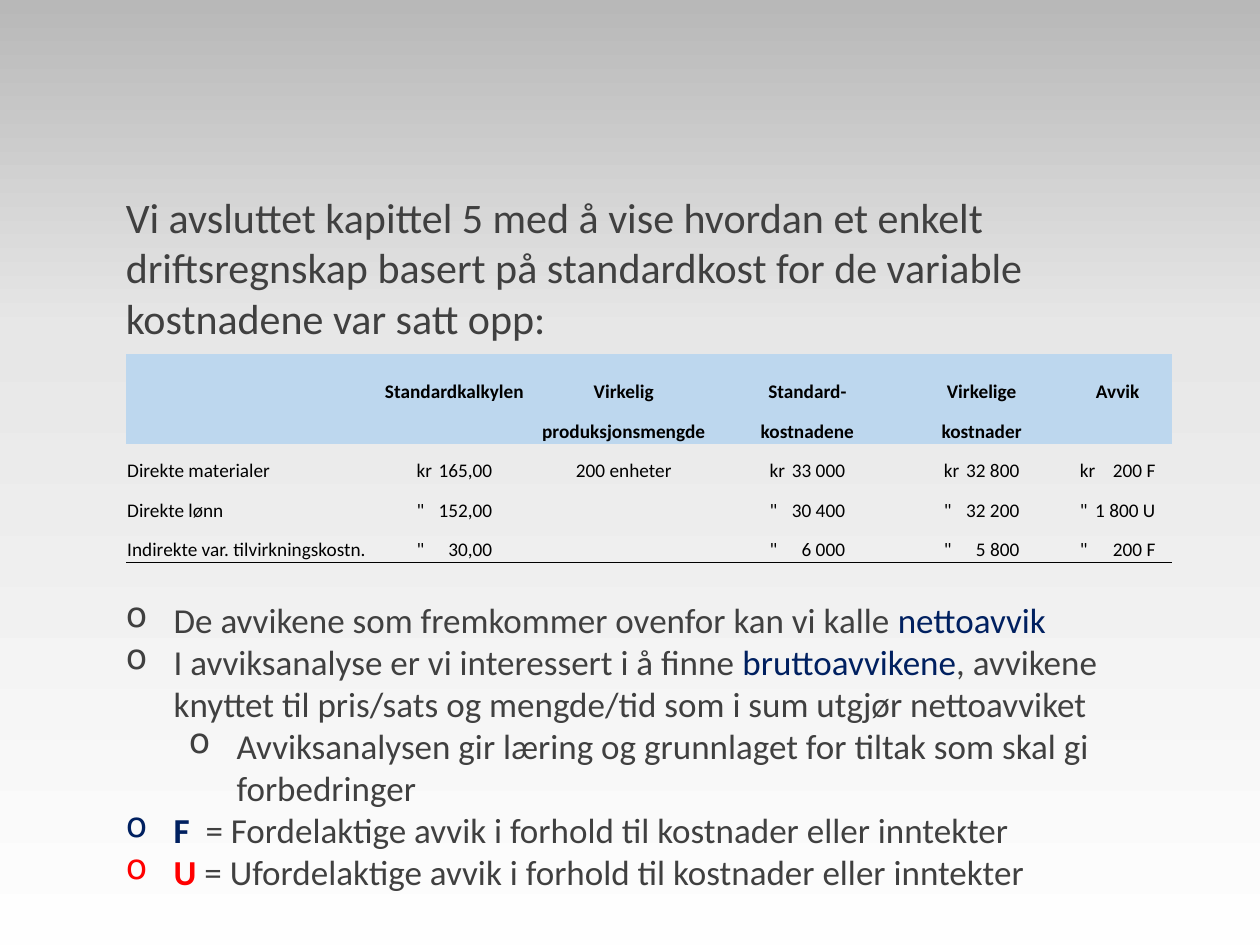
from copy import deepcopy
from dataclasses import dataclass

from lxml import etree
from pptx import Presentation
from pptx import util as u
from pptx.dml.color import RGBColor
from pptx.enum import text
from pptx.oxml.ns import qn


@dataclass(frozen=True)
class Theme:
    font: str = "Calibri"
    body: str = "404040"
    black: str = "000000"
    key: str = "002060"
    warning: str = "FF0000"
    header: str = "BDD7EE"
    backdrop: tuple = ((0, "B8B8B8"), (0.35, "E7E7E7"), (1, "FEFEFE"))
    intro_size: int = 24
    bullet_size: int = 20
    table_size: int = 11


@dataclass(frozen=True)
class Box:
    left: int
    top: int
    width: int
    height: int

    def share(self, left, top, width, height):
        return Box(int(self.left + left * self.width), int(self.top + top * self.height),
                   int(width * self.width), int(height * self.height))

    def sides(self):
        return self.left, self.top, self.width, self.height


THEME = Theme()
PLAIN_TABLE = "{2D5ABB26-0587-4C30-8999-92F81FD0307C}"
COLUMNS = (2, 1.24, 1.46, 1.47, 1.31, 0.86)
ROWS = (0.39, 0.31, 0.31, 0.31, 0.31)
HEADER_ROWS = 2
AMOUNT_WIDTH = u.Inches(0.6)
INDENT = u.Inches(0.38)
LEVEL_STEP = u.Inches(0.5)
INTRO_GAP = u.Pt(146)

COSTS = (
    ("", "Standardkalkylen", "Virkelig", "Standard-", "Virkelige", "Avvik"),
    ("", "", "produksjonsmengde", "kostnadene", "kostnader", ""),
    ("Direkte materialer", "kr\t165,00", "200 enheter", "kr\t33 000", "kr\t32 800", "kr\t200 F"),
    ("Direkte lønn", '"\t152,00', "", '"\t30 400', '"\t32 200', '"\t1 800 U'),
    ("Indirekte var. tilvirkningskostn.", '"\t30,00', "", '"\t6 000', '"\t5 800', '"\t200 F'),
)

INTRO = ("Vi avsluttet kapittel 5 med å vise hvordan et enkelt driftsregnskap basert på "
         "standardkost for de variable kostnadene var satt opp:")

POINTS = (
    (0, (("De avvikene som fremkommer ovenfor kan vi kalle ", THEME.body, False),
         ("nettoavvik", THEME.key, False))),
    (0, (("I avviksanalyse er vi interessert i å finne ", THEME.body, False),
         ("bruttoavvikene", THEME.key, False),
         (", avvikene knyttet til pris/sats og mengde/tid som i sum utgjør nettoavviket",
          THEME.body, False))),
    (1, (("Avviksanalysen gir læring og grunnlaget for tiltak som skal gi forbedringer",
          THEME.body, False),)),
    (0, (("F ", THEME.key, True),
         (" = Fordelaktige avvik i forhold til kostnader eller inntekter", THEME.body, False))),
    (0, (("U", THEME.warning, True),
         (" = Ufordelaktige avvik i forhold til kostnader eller inntekter", THEME.body, False))),
)


def style(run, size, color, bold=False):
    run.font.name = THEME.font
    run.font.size = u.Pt(size)
    run.font.bold = bold
    run.font.color.rgb = RGBColor.from_string(color)


def paint_background(slide):
    fill = slide.background.fill
    fill.gradient()
    fill.gradient_angle = 270
    stops = next(slide.element.iter(qn("a:gsLst")))
    stops.append(deepcopy(stops[0]))
    for stop, (position, color) in zip(slide.background.fill.gradient_stops, THEME.backdrop):
        stop.position = position
        stop.color.rgb = RGBColor.from_string(color)


def rule_below(cell):
    line = etree.Element(qn("a:lnB"), w=str(u.Pt(0.5)))
    solid = etree.SubElement(line, qn("a:solidFill"))
    etree.SubElement(solid, qn("a:srgbClr"), val=THEME.black)
    cell._tc.get_or_add_tcPr().insert(0, line)


def align_amount(cell, column_width):
    cell.margin_left = (column_width - AMOUNT_WIDTH) // 2
    properties = cell.text_frame.paragraphs[0]._p.get_or_add_pPr()
    tabs = etree.SubElement(properties, qn("a:tabLst"))
    etree.SubElement(tabs, qn("a:tab"), pos=str(AMOUNT_WIDTH), algn="r")


def fill_cell(cell, words, row, column, column_width):
    cell.margin_left = cell.margin_right = u.Inches(0.01)
    cell.margin_top = cell.margin_bottom = 0
    cell.vertical_anchor = text.MSO_ANCHOR.BOTTOM
    is_header = row < HEADER_ROWS
    if is_header:
        cell.fill.solid()
        cell.fill.fore_color.rgb = RGBColor.from_string(THEME.header)
    else:
        cell.fill.background()
    if row == len(ROWS) - 1:
        rule_below(cell)
    if not words:
        return
    paragraph = cell.text_frame.paragraphs[0]
    paragraph.text = words
    for run in paragraph.runs:
        style(run, THEME.table_size, THEME.black, is_header)
    if "\t" in words:
        paragraph.alignment = text.PP_ALIGN.LEFT
        align_amount(cell, column_width)
    elif column:
        paragraph.alignment = text.PP_ALIGN.CENTER


def add_cost_table(slide, box):
    frame = slide.shapes.add_table(len(ROWS), len(COLUMNS), *box.sides())
    costs = frame.table
    costs.first_row = costs.horz_banding = False
    costs._tbl.tblPr.find(qn("a:tableStyleId")).text = PLAIN_TABLE
    for column, share in zip(costs.columns, COLUMNS):
        column.width = int(box.width * share / sum(COLUMNS))
    for row, share in zip(costs.rows, ROWS):
        row.height = int(box.height * share / sum(ROWS))
    for r, entries in enumerate(COSTS):
        for c, words in enumerate(entries):
            fill_cell(costs.cell(r, c), words, r, c, costs.columns[c].width)


def add_bullet(paragraph, level):
    paragraph.level = level
    properties = paragraph._p.get_or_add_pPr()
    properties.set("marL", str(INDENT + level * LEVEL_STEP))
    properties.set("indent", str(-INDENT))
    etree.SubElement(properties, qn("a:buChar"), char="o")


def add_explanation(slide, box):
    frame = slide.shapes.add_textbox(*box.sides()).text_frame
    frame.word_wrap = True
    intro = frame.paragraphs[0]
    intro.text = INTRO
    style(intro.runs[0], THEME.intro_size, THEME.body)
    for index, (level, pieces) in enumerate(POINTS):
        point = frame.add_paragraph()
        if index == 0:
            point.space_before = INTRO_GAP
        add_bullet(point, level)
        for words, color, bold in pieces:
            run = point.add_run()
            run.text = words
            style(run, THEME.bullet_size, color, bold)


def main():
    deck = Presentation()
    deck.slide_width, deck.slide_height = u.Inches(10), u.Inches(7.5)
    page = Box(0, 0, deck.slide_width, deck.slide_height)
    slide = deck.slides.add_slide(deck.slide_layouts[6])
    paint_background(slide)
    add_cost_table(slide, page.share(0.1, 0.375, 0.83, 0.22))
    add_explanation(slide, page.share(0.09, 0.196, 0.86, 0.81))
    deck.save("out.pptx")


if __name__ == "__main__":
    main()
